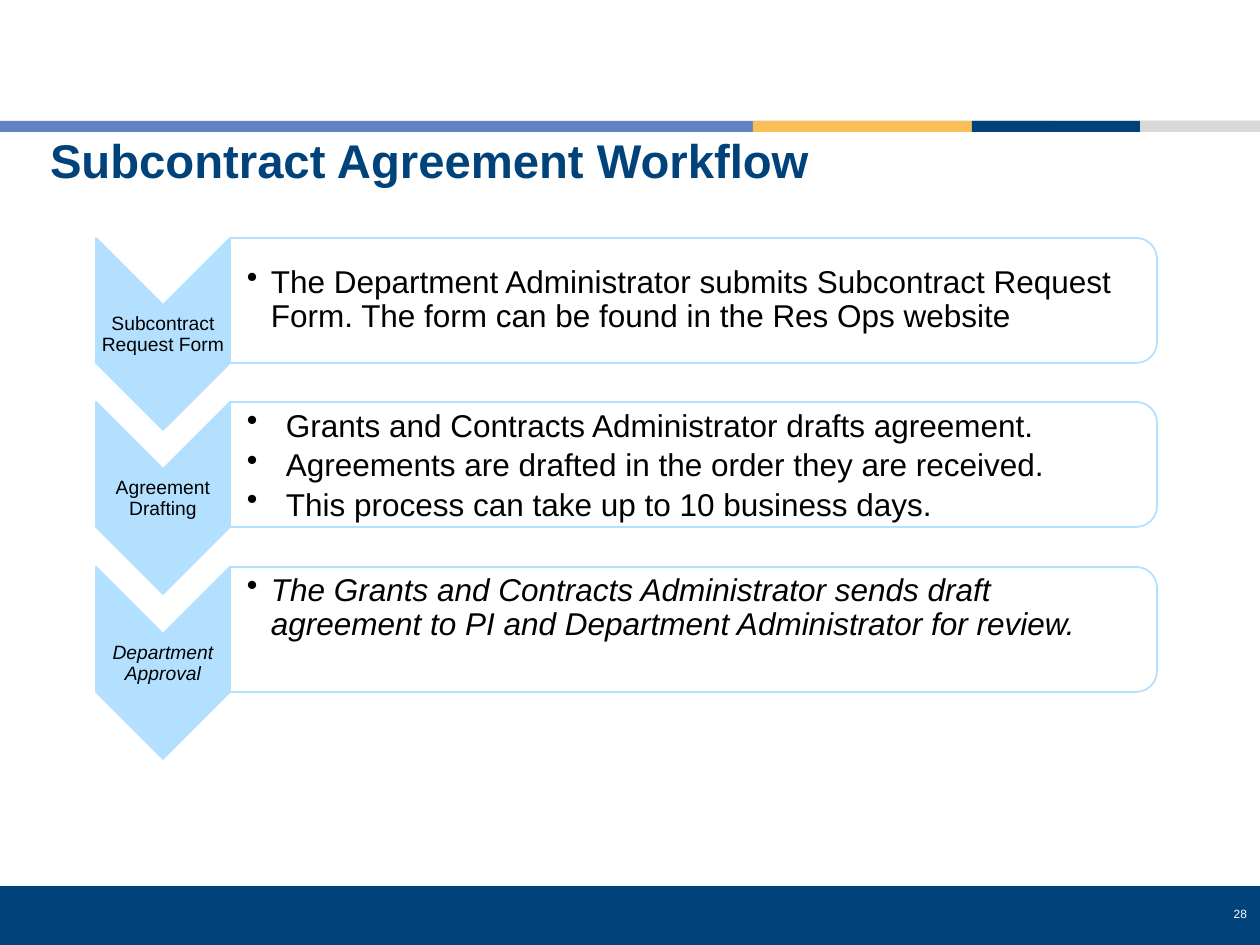
from dataclasses import dataclass

import pptx
import pptx.dml.color
import pptx.enum.shapes
import pptx.enum.text
import pptx.util
from lxml import etree
from pptx.oxml.ns import qn

PX_PER_INCH = 126
FONT = "Arial"
COLORS = {
    "navy": "00437B", "blue": "6283C2", "gold": "F8BF56", "gray": "D9D9D9",
    "sky": "B3E0FF", "white": "FFFFFF", "black": "000000",
}
SHAPES = pptx.enum.shapes.MSO_SHAPE
ALIGN = pptx.enum.text.PP_ALIGN
ANCHOR = pptx.enum.text.MSO_ANCHOR


@dataclass(frozen=True)
class Box:
    left: int
    top: int
    width: int
    height: int


@dataclass(frozen=True)
class TextStyle:
    size: float
    color: str = "black"
    bold: bool = False
    italic: bool = False
    align: ALIGN = ALIGN.LEFT
    anchor: ANCHOR = ANCHOR.MIDDLE
    insets: tuple[int, int, int, int] = (1, 1, 1, 1)
    line_spacing: float = 0.9
    space_after: float = 0
    bullet_indent: int = 0


@dataclass(frozen=True)
class Step:
    label: str
    bullets: tuple[str, ...]
    bullet_indent: int = 24
    line_spacing: float = 0.9
    space_after: float = 2.7
    anchor: ANCHOR = ANCHOR.MIDDLE
    italic: bool = False


@dataclass(frozen=True)
class Band:
    box: Box
    color: str


BANDS = (
    Band(Box(0, 886, 1260, 59), "navy"),
    Band(Box(0, 121, 1261, 11), "blue"),
    Band(Box(753, 121, 302, 11), "gold"),
    Band(Box(972, 121, 168, 11), "navy"),
    Band(Box(1140, 121, 120, 11), "gray"),
)
STEPS = (
    Step("Subcontract Request Form",
         ("The Department Administrator submits Subcontract Request Form. "
          "The form can be found in the Res Ops website",)),
    Step("Agreement Drafting",
         ("Grants and Contracts Administrator drafts agreement.",
          "Agreements are drafted in the order they are received.",
          "This process can take up to 10 business days."),
         bullet_indent=39, line_spacing=1.0, space_after=1),
    Step("Department Approval",
         ("The Grants and Contracts Administrator sends draft agreement to PI "
          "and Department Administrator for review.",),
         anchor=ANCHOR.TOP, italic=True),
)
FIRST_STEP_TOP = 238
STEP_PITCH = 164.5


def px(value: float) -> pptx.util.Emu:
    return pptx.util.Emu(round(value * 914400 / PX_PER_INCH))


def rgb(name: str) -> pptx.dml.color.RGBColor:
    return pptx.dml.color.RGBColor.from_string(COLORS[name])


def place(box: Box) -> tuple[pptx.util.Emu, ...]:
    return px(box.left), px(box.top), px(box.width), px(box.height)


def add_block(slide, kind: SHAPES, box: Box, fill: str,
              line: str | None = None, rotation: int = 0) -> None:
    shape = slide.shapes.add_shape(kind, *place(box))
    shape.shadow.inherit = False
    shape.rotation = rotation
    shape.fill.solid()
    shape.fill.fore_color.rgb = rgb(fill)
    if line is None:
        shape.line.fill.background()
    else:
        shape.line.color.rgb = rgb(line)
        shape.line.width = pptx.util.Pt(1)


def add_bullet(paragraph, indent: int) -> None:
    """Give the paragraph a round bullet with a hanging indent."""
    properties = paragraph._p.get_or_add_pPr()
    properties.set("marL", str(px(indent)))
    properties.set("indent", str(-px(indent)))
    etree.SubElement(properties, qn("a:buChar")).set("char", "•")


def add_text(slide, box: Box, texts: tuple[str, ...], style: TextStyle) -> None:
    frame = slide.shapes.add_textbox(*place(box)).text_frame
    frame.word_wrap = True
    frame.vertical_anchor = style.anchor
    (frame.margin_left, frame.margin_top,
     frame.margin_right, frame.margin_bottom) = map(px, style.insets)
    for index, text in enumerate(texts):
        paragraph = frame.add_paragraph() if index else frame.paragraphs[0]
        if style.bullet_indent:
            add_bullet(paragraph, style.bullet_indent)
        paragraph.alignment = style.align
        paragraph.line_spacing = style.line_spacing
        paragraph.space_after = pptx.util.Pt(style.space_after)
        run = paragraph.add_run()
        run.text = text
        run.font.name = FONT
        run.font.size = pptx.util.Pt(style.size)
        run.font.bold = style.bold
        run.font.italic = style.italic
        run.font.color.rgb = rgb(style.color)


def add_step(slide, step: Step, top: int) -> None:
    add_block(slide, SHAPES.CHEVRON, Box(67, top + 29, 192, 134),
              "sky", "sky", rotation=90)
    add_text(slide, Box(96, top + 68, 134, 58), (step.label,),
             TextStyle(11, italic=step.italic, align=ALIGN.CENTER, space_after=3.85))
    add_block(slide, SHAPES.ROUND_2_SAME_RECTANGLE, Box(631, top - 401, 125, 927),
              "white", "sky", rotation=90)
    add_text(slide, Box(229, top + 6, 922, 112), step.bullets,
             TextStyle(18, italic=step.italic, anchor=step.anchor,
                       insets=(18, 1, 1, 1), line_spacing=step.line_spacing,
                       space_after=step.space_after,
                       bullet_indent=step.bullet_indent))


def main() -> None:
    presentation = pptx.Presentation()
    presentation.slide_width = px(1260)
    presentation.slide_height = px(945)
    slide = presentation.slides.add_slide(presentation.slide_layouts[6])
    for band in BANDS:
        add_block(slide, SHAPES.RECTANGLE, band.box, band.color)
    add_text(slide, Box(1173, 901, 87, 26), ("28",),
             TextStyle(6.8, "white", align=ALIGN.RIGHT, anchor=ANCHOR.TOP,
                       insets=(13, 6, 13, 6), line_spacing=1.0))
    for index, step in enumerate(STEPS):
        add_step(slide, step, FIRST_STEP_TOP + int(index * STEP_PITCH))
    add_text(slide, Box(41, 134, 1206, 60), ("Subcontract Agreement Workflow",),
             TextStyle(27, "navy", bold=True, anchor=ANCHOR.BOTTOM,
                       insets=(9, 5, 9, 5)))
    presentation.save("out.pptx")


if __name__ == "__main__":
    main()
